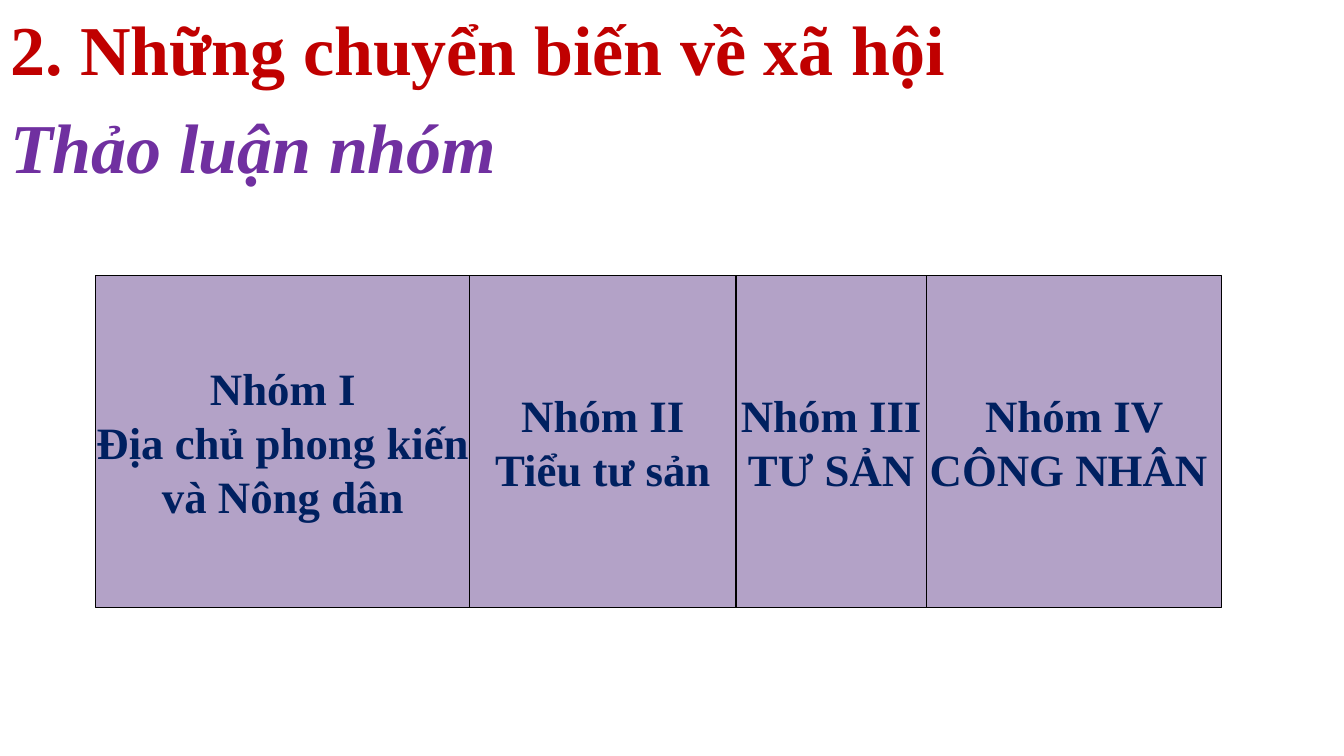
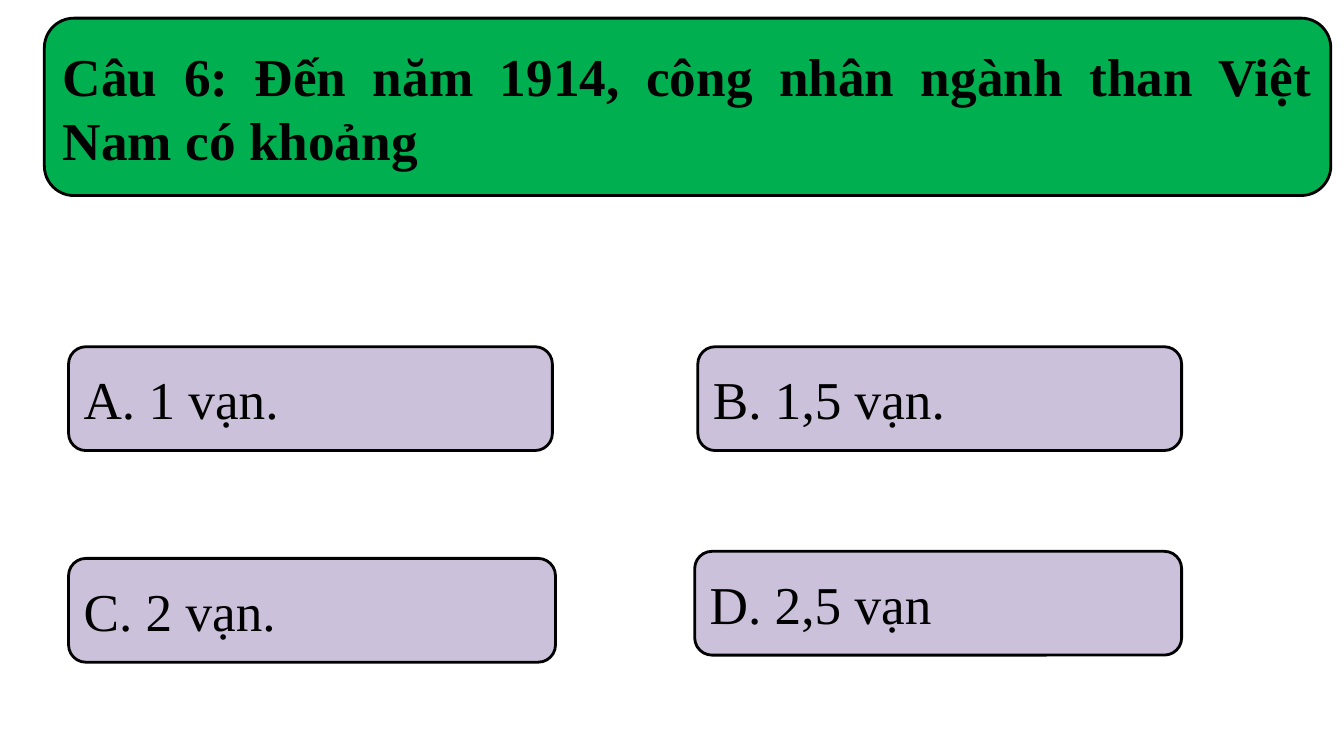
from dataclasses import dataclass
from itertools import accumulate

from lxml import etree
from pptx import Presentation
from pptx.dml.color import RGBColor
from pptx.enum.shapes import MSO_SHAPE
from pptx.enum.text import MSO_ANCHOR, MSO_AUTO_SIZE, PP_ALIGN
from pptx.oxml.ns import qn
from pptx.util import Inches, Pt

RECT, ROUND = MSO_SHAPE.RECTANGLE, MSO_SHAPE.ROUNDED_RECTANGLE
MIDDLE, NO_FIT = MSO_ANCHOR.MIDDLE, MSO_AUTO_SIZE.NONE
CENTER, JUSTIFY = PP_ALIGN.CENTER, PP_ALIGN.JUSTIFY
WIDE, HIGH = Inches(13.33), Inches(7.5)
TOPIC, BLANK = 1, 6


@dataclass(frozen=True)
class Theme:
    font: str = "Times New Roman"
    black: str = "000000"
    red: str = "C00000"
    purple: str = "7030A0"
    navy: str = "002060"
    green: str = "00B050"
    mauve: str = "B3A2C7"
    lilac: str = "CCC1DA"
    head: int = 50
    quiz: int = 38
    group: int = 32
    thin: float = 0.75
    thick: float = 2


THEME = Theme()


def area(x, y, w, h):
    return [int(side * part / 100)
            for side, part in zip((WIDE, HIGH, WIDE, HIGH), (x, y, w, h))]


def add_run(para, text, size, color, bold=False, italic=False):
    run = para.add_run()
    run.text = text
    font = run.font
    font.name, font.size = THEME.font, Pt(size)
    font.bold, font.italic = bold, italic
    font.color.rgb = RGBColor.from_string(color)


def get_para(frame, index):
    return frame.add_paragraph() if index else frame.paragraphs[0]


def drop_bullet(para):
    props = para._p.get_or_add_pPr()
    props.set("marL", "0")
    props.set("indent", "0")
    etree.SubElement(props, qn("a:buNone"))


def add_box(slide, kind, place, fill, edge, lines, size, color, align, bold, wrap=True):
    box = slide.shapes.add_shape(kind, *area(*place))
    box.shadow.inherit = False
    box.fill.solid()
    box.fill.fore_color.rgb = RGBColor.from_string(fill)
    box.line.color.rgb = RGBColor.from_string(THEME.black)
    box.line.width = Pt(edge)
    frame = box.text_frame
    frame.word_wrap, frame.vertical_anchor = wrap, MIDDLE
    for index, line in enumerate(lines):
        para = get_para(frame, index)
        para.alignment = align
        add_run(para, line, size, color, bold)


def add_topic(slide, lines):
    title, body = slide.shapes.title, slide.placeholders[1]
    title.element.getparent().remove(title.element)
    body.left, body.top, body.width, body.height = area(0, 0, 100, 100)
    frame = body.text_frame
    frame.auto_size = NO_FIT
    for index, (text, color, italic) in enumerate(lines):
        para = get_para(frame, index)
        drop_bullet(para)
        add_run(para, text, THEME.head, color, True, italic)


def add_groups(slide, groups):
    left, top, high = 7.13, 36.4, 44
    edges = accumulate((width for width, _ in groups), initial=left)
    for x, (width, lines) in zip(edges, groups):
        add_box(slide, RECT, (x, top, width, high), THEME.mauve, THEME.thin,
                lines, THEME.group, THEME.navy, CENTER, True, False)


def add_quiz(slide, question, rows):
    left, right, high = 5.1, 87.92, 13.73
    add_box(slide, ROUND, (3.3, 2.4, 95.72, 23.47), THEME.green, THEME.thick,
            [question], THEME.quiz, THEME.black, JUSTIFY, True)
    for width, *pair in rows:
        for x, (top, text) in zip((left, right - width), pair):
            add_box(slide, ROUND, (x, top, width, high), THEME.lilac, THEME.thick,
                    [text], THEME.quiz, THEME.black, JUSTIFY, False)


def main():
    deck = Presentation()
    deck.slide_width, deck.slide_height = WIDE, HIGH

    slide = deck.slides.add_slide(deck.slide_layouts[TOPIC])
    add_topic(slide, [
        ("2. Những chuyển biến về xã hội", THEME.red, False),
        ("Thảo luận nhóm", THEME.purple, True),
    ])
    add_groups(slide, [
        (27.83, ["Nhóm I", "Địa chủ phong kiến", "và Nông dân"]),
        (19.8, ["Nhóm II", "Tiểu tư sản"]),
        (14.18, ["Nhóm III", "TƯ SẢN"]),
        (21.98, ["Nhóm IV", "CÔNG NHÂN "]),
    ])

    slide = deck.slides.add_slide(deck.slide_layouts[BLANK])
    add_quiz(slide, "Câu 6: Đến năm 1914, công nhân ngành than Việt Nam có khoảng", [
        (36, (45.87, "A. 1 vạn."), (45.87, "B. 1,5 vạn.")),
        (36.23, (73.87, "C. 2 vạn."), (72.93, "D. 2,5 vạn")),
    ])

    deck.save("out.pptx")


if __name__ == "__main__":
    main()
